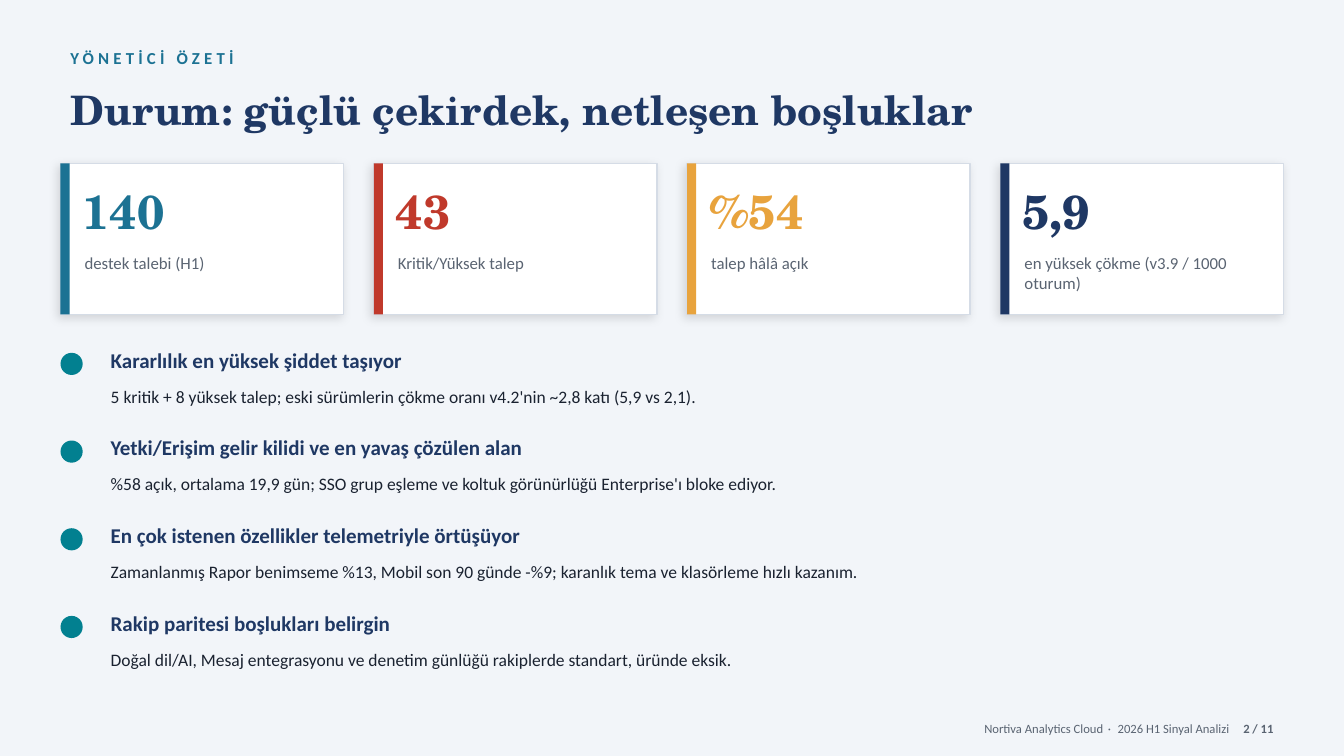
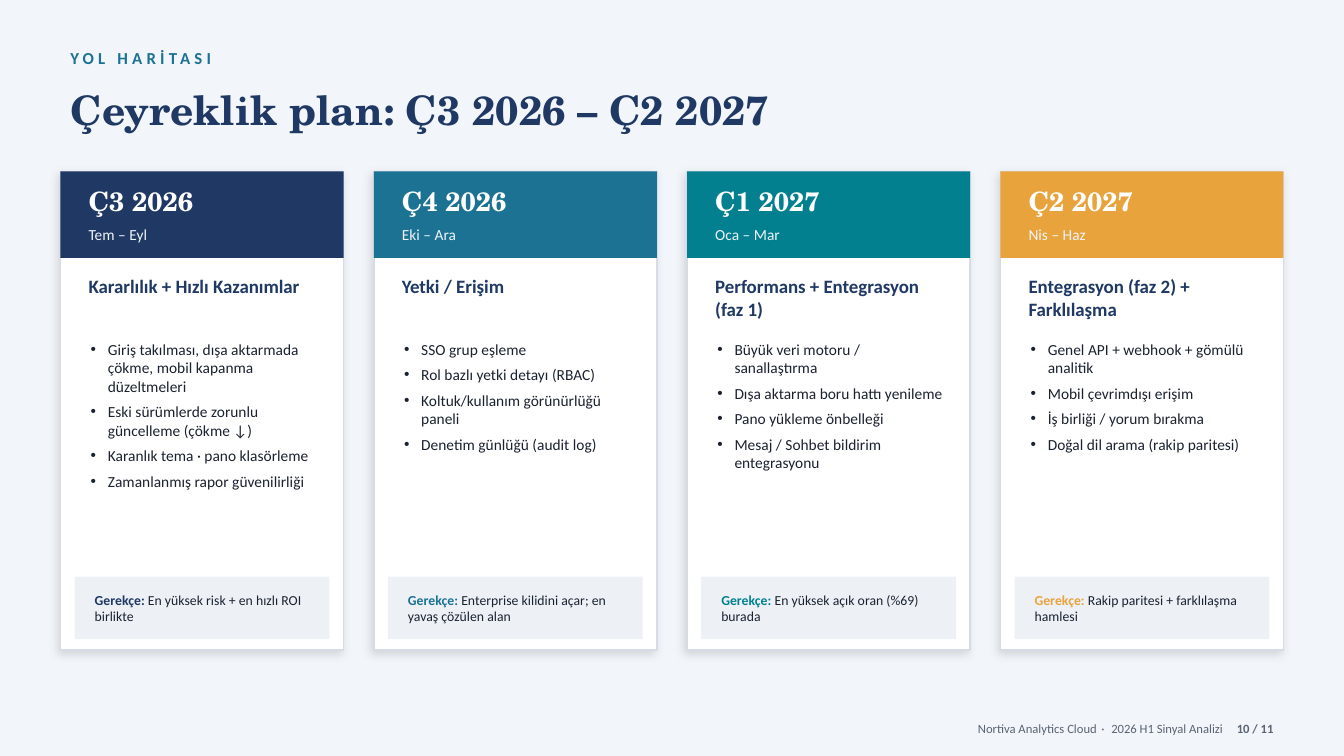
import dataclasses

import lxml.etree
import pptx
import pptx.dml.color
import pptx.enum.shapes
import pptx.enum.text
import pptx.oxml.ns
import pptx.util

SHAPES = pptx.enum.shapes.MSO_SHAPE
ALIGN = pptx.enum.text.PP_ALIGN
ANCHOR = pptx.enum.text.MSO_ANCHOR
Inches = pptx.util.Inches
Pt = pptx.util.Pt


@dataclasses.dataclass(frozen=True)
class Theme:
    # Fonts
    serif: str = "TeX Gyre Schola"
    sans: str = "Calibri"
    # Colours
    background: str = "F2F5F9"
    white: str = "FFFFFF"
    border: str = "D5DCE6"
    panel: str = "EDF1F6"
    pale: str = "F0F4F8"
    navy: str = "1F3864"
    blue: str = "1C7293"
    teal: str = "028090"
    amber: str = "E8A33D"
    red: str = "C0392B"
    ink: str = "1A2230"
    muted: str = "5A6472"
    # Type sizes
    title: float = 29
    figure: float = 34
    quarter: float = 19
    point: float = 15
    focus: float = 13.5
    detail: float = 12.5
    label: float = 12
    list_item: float = 11
    reason: float = 9.8
    footer: float = 9


THEME = Theme()


@dataclasses.dataclass(frozen=True)
class Box:
    left: float
    top: float
    width: float
    height: float

    def inner(self, left, top, width, height):
        """A box placed relative to this one."""
        return Box(self.left + left, self.top + top, width, height)

    def columns(self, count, gap):
        width = (self.width - gap * (count - 1)) / count
        return [self.inner(i * (width + gap), 0, width, self.height) for i in range(count)]

    def rows(self, count):
        height = self.height / count
        return [self.inner(0, i * height, self.width, height) for i in range(count)]

    def lengths(self):
        return [Inches(n) for n in (self.left, self.top, self.width, self.height)]


SLIDE = Box(0, 0, 13.33, 7.5)
MARGIN = 0.6
CONTENT_WIDTH = SLIDE.width - 2 * MARGIN
COLUMN_GAP = 0.3
TOTAL_PAGES = 11
TITLE_ONLY, COMPARISON = 5, 4


def rgb(code):
    return pptx.dml.color.RGBColor.from_string(code)


# Text: each paragraph is a string or a list of (text, format changes)
def write(frame, *paragraphs, size, color=THEME.ink, font=THEME.sans, bold=False,
          spacing=0, align=ALIGN.LEFT, anchor=ANCHOR.MIDDLE, bullet=False, after=0):
    frame.word_wrap = True
    frame.auto_size = pptx.enum.text.MSO_AUTO_SIZE.NONE
    frame.vertical_anchor = anchor
    base = {"color": color, "bold": bold, "spacing": spacing}
    for index, content in enumerate(paragraphs):
        para = frame.add_paragraph() if index else frame.paragraphs[0]
        para.alignment = align
        para.space_before = Pt(0)
        para.space_after = Pt(after)
        if bullet:
            add_bullet(para)
        spans = [(content, {})] if isinstance(content, str) else content
        for text, changes in spans:
            style = {**base, **changes}
            span = para.add_run()
            span.text = text
            span.font.name = font
            span.font.size = Pt(size)
            span.font.bold = style["bold"]
            span.font.color.rgb = rgb(style["color"])
            if style["spacing"]:
                span.font._element.set("spc", str(round(style["spacing"] * 100)))


def add_bullet(para, indent=0.17):
    properties = para._p.get_or_add_pPr()
    properties.set("marL", str(Inches(indent)))
    properties.set("indent", str(-Inches(indent)))
    mark = lxml.etree.SubElement(properties, pptx.oxml.ns.qn("a:buChar"))
    mark.set("char", "•")


def add_text(page, box, *paragraphs, **style):
    write(page.shapes.add_textbox(*box.lengths()).text_frame, *paragraphs, **style)


def fill_placeholder(holder, box, *paragraphs, **style):
    holder.left, holder.top, holder.width, holder.height = box.lengths()
    write(holder.text_frame, *paragraphs, **style)


# Shapes
def add_block(page, box, fill, kind=SHAPES.RECTANGLE):
    block = page.shapes.add_shape(kind, *box.lengths())
    block.shadow.inherit = False
    block.fill.solid()
    block.fill.fore_color.rgb = rgb(fill)
    block.line.fill.background()
    return block


def add_card(page, box):
    card = add_block(page, box, THEME.white)
    card.line.color.rgb = rgb(THEME.border)
    card.line.width = Pt(1)
    qn = pptx.oxml.ns.qn
    effects = card._element.spPr.find(qn("a:effectLst"))
    shadow = lxml.etree.SubElement(effects, qn("a:outerShdw"), blurRad=str(Pt(7)),
                                   dist=str(Pt(3)), dir=str(135 * 60000),
                                   algn="bl", rotWithShape="0")
    tint = lxml.etree.SubElement(shadow, qn("a:srgbClr"), val="000000")
    lxml.etree.SubElement(tint, qn("a:alpha"), val="13000")


# Shared frame: kicker, title and footer
def add_page(deck, layout, number, kicker, title):
    page = deck.slides.add_slide(deck.slide_layouts[layout])
    header = Box(MARGIN, 0.42, CONTENT_WIDTH, 1.02)
    add_text(page, header.inner(0, 0, header.width, 0.3), kicker,
             size=THEME.label, color=THEME.blue, bold=True, spacing=3)
    fill_placeholder(page.shapes.title, header.inner(0, 0.3, header.width, 0.72), title,
                     size=THEME.title, color=THEME.navy, font=THEME.serif, bold=True)
    footer = [("Nortiva Analytics Cloud", {}), (" · ", {"spacing": 1.35}),
              ("2026 H1 Sinyal Analizi", {}), (" ", {"spacing": 8}),
              (f"{number} / {TOTAL_PAGES}", {"bold": True})]
    add_text(page, Box(MARGIN, 7.08, CONTENT_WIDTH, 0.3), footer,
             size=THEME.footer, color=THEME.muted, align=ALIGN.RIGHT)
    return page


# Summary slide regions
def add_metric(page, box, figure, label, color):
    add_card(page, box)
    add_block(page, box.inner(0, 0, 0.09, box.height), color)
    add_text(page, box.inner(0.12, 0.12, box.width - 0.2, 0.7), figure,
             size=THEME.figure, color=color, font=THEME.serif, bold=True)
    add_text(page, box.inner(0.14, 0.84, box.width - 0.25, 0.55), label,
             size=THEME.label, color=THEME.muted, anchor=ANCHOR.TOP)


def add_finding(page, box, heading, detail):
    add_block(page, box.inner(0, 0.1, 0.22, 0.22), THEME.teal, SHAPES.OVAL)
    add_text(page, box.inner(0.4, 0, box.width - 0.4, 0.34), heading,
             size=THEME.point, color=THEME.navy, bold=True)
    add_text(page, box.inner(0.4, 0.33, box.width - 0.4, 0.4), detail, size=THEME.detail)


def build_summary(deck):
    page = add_page(deck, TITLE_ONLY, 2, "YÖNETİCİ ÖZETİ",
                    "Durum: güçlü çekirdek, netleşen boşluklar")
    metrics = [
        ("140", "destek talebi (H1)", THEME.blue),
        ("43", "Kritik/Yüksek talep", THEME.red),
        ("%54", "talep hâlâ açık", THEME.amber),
        ("5,9", "en yüksek çökme (v3.9 / 1000 oturum)", THEME.navy),
    ]
    findings = [
        ("Kararlılık en yüksek şiddet taşıyor",
         "5 kritik + 8 yüksek talep; eski sürümlerin çökme oranı v4.2'nin ~2,8 katı (5,9 vs 2,1)."),
        ("Yetki/Erişim gelir kilidi ve en yavaş çözülen alan",
         "%58 açık, ortalama 19,9 gün; SSO grup eşleme ve koltuk görünürlüğü Enterprise'ı bloke ediyor."),
        ("En çok istenen özellikler telemetriyle örtüşüyor",
         "Zamanlanmış Rapor benimseme %13, Mobil son 90 günde -%9; karanlık tema ve klasörleme hızlı kazanım."),
        ("Rakip paritesi boşlukları belirgin",
         "Doğal dil/AI, Mesaj entegrasyonu ve denetim günlüğü rakiplerde standart, üründe eksik."),
    ]
    strip = Box(MARGIN, 1.62, CONTENT_WIDTH, 1.5)
    for box, metric in zip(strip.columns(len(metrics), COLUMN_GAP), metrics):
        add_metric(page, box, *metric)
    body = Box(MARGIN, 3.4, CONTENT_WIDTH, 3.48)
    for box, finding in zip(body.rows(len(findings)), findings):
        add_finding(page, box, *finding)


# Roadmap slide regions
def add_quarter(page, box, holder, quarter, months, color, focus, items, reason):
    add_card(page, box)
    # Header band
    add_block(page, box.inner(0, 0, box.width, 0.86), color)
    add_text(page, box.inner(0.18, 0.08, box.width - 0.3, 0.42), quarter,
             size=THEME.quarter, color=THEME.white, font=THEME.serif, bold=True)
    add_text(page, box.inner(0.18, 0.48, box.width - 0.3, 0.3), months,
             size=THEME.list_item, color=THEME.pale)
    # Focus and list
    text_width = box.width - 0.36
    add_text(page, box.inner(0.18, 0.98, text_width, 0.62), focus,
             size=THEME.focus, color=THEME.navy, bold=True, anchor=ANCHOR.TOP)
    fill_placeholder(holder, box.inner(0.2, 1.62, text_width, 2.25), *items,
                     size=THEME.list_item, anchor=ANCHOR.TOP, bullet=True, after=5)
    # The list belongs in front of its card
    holder.element.getparent().append(holder.element)
    # Reason panel
    add_block(page, box.inner(0.14, 4.02, box.width - 0.28, 0.62), THEME.panel)
    add_text(page, box.inner(0.24, 4.05, box.width - 0.44, 0.56),
             [("Gerekçe: ", {"color": color, "bold": True}), (reason, {})],
             size=THEME.reason)


def build_roadmap(deck):
    page = add_page(deck, COMPARISON, 10, "YOL HARİTASI", "Çeyreklik plan: Ç3 2026 – Ç2 2027")
    quarters = [
        ("Ç3 2026", "Tem – Eyl", THEME.navy, "Kararlılık + Hızlı Kazanımlar",
         ["Giriş takılması, dışa aktarmada çökme, mobil kapanma düzeltmeleri",
          "Eski sürümlerde zorunlu güncelleme (çökme ↓)",
          "Karanlık tema · pano klasörleme",
          "Zamanlanmış rapor güvenilirliği"],
         "En yüksek risk + en hızlı ROI birlikte"),
        ("Ç4 2026", "Eki – Ara", THEME.blue, "Yetki / Erişim",
         ["SSO grup eşleme",
          "Rol bazlı yetki detayı (RBAC)",
          "Koltuk/kullanım görünürlüğü paneli",
          "Denetim günlüğü (audit log)"],
         "Enterprise kilidini açar; en yavaş çözülen alan"),
        ("Ç1 2027", "Oca – Mar", THEME.teal, "Performans + Entegrasyon (faz 1)",
         ["Büyük veri motoru / sanallaştırma",
          "Dışa aktarma boru hattı yenileme",
          "Pano yükleme önbelleği",
          "Mesaj / Sohbet bildirim entegrasyonu"],
         "En yüksek açık oran (%69) burada"),
        ("Ç2 2027", "Nis – Haz", THEME.amber, "Entegrasyon (faz 2) + Farklılaşma",
         ["Genel API + webhook + gömülü analitik",
          "Mobil çevrimdışı erişim",
          "İş birliği / yorum bırakma",
          "Doğal dil arama (rakip paritesi)"],
         "Rakip paritesi + farklılaşma hamlesi"),
    ]
    board = Box(MARGIN, 1.7, CONTENT_WIDTH, 4.75)
    holders = list(page.placeholders)[1:]
    for box, holder, plan in zip(board.columns(len(quarters), COLUMN_GAP), holders, quarters):
        add_quarter(page, box, holder, *plan)


def main():
    deck = pptx.Presentation()
    deck.slide_width, deck.slide_height = SLIDE.lengths()[2:]
    backdrop = deck.slide_master.background.fill
    backdrop.solid()
    backdrop.fore_color.rgb = rgb(THEME.background)
    build_summary(deck)
    build_roadmap(deck)
    deck.save("out.pptx")


if __name__ == "__main__":
    main()
